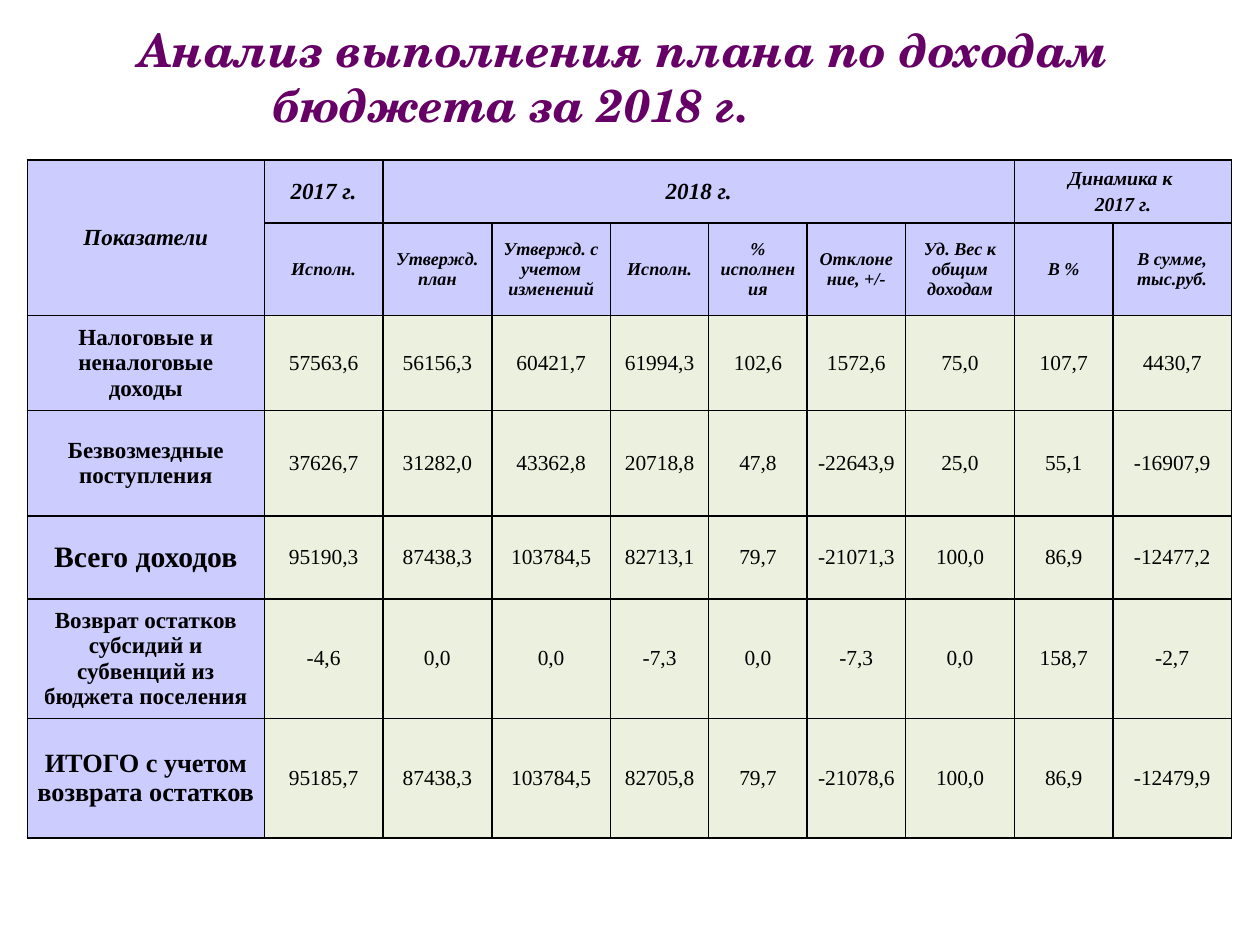
from lxml.etree import SubElement
from pptx import Presentation
from pptx.dml.color import RGBColor as RGB
from pptx.enum.text import MSO_ANCHOR as Anchor, PP_ALIGN as Align
from pptx.oxml import parse_xml
from pptx.oxml.ns import nsdecls, qn
from pptx.util import Emu, Inches, Pt

W, H = Emu(9720263), Emu(7200900)
COLORS = {"title": "660066", "text": "000000", "border": "000000",
          "head": "CCCCFF", "value": "EBF1DE"}
TITLE_FONT, TABLE_FONT = "TeX Gyre Schola", "Times New Roman"

TITLE = [("Анализ выполнения плана по доходам", 1.06),
         ("бюджета за 2018 г.", 2.2)]
GROUPS = [
    (0, 2, 1, "Показатели", 14),
    (1, 1, 1, "2017 г.", 14),
    (2, 1, 6, "2018 г.", 14),
    (8, 1, 2, "Динамика к \n2017 г.", 12),
]
HEADS = ["Исполн.", "Утвержд. план", "Утвержд. с учетом изменений", "Исполн.",
         "% исполнения", "Отклонение, +/-", "Уд. Вес к общим доходам",
         "В %", "В сумме, тыс.руб."]
ROWS = [
    ("Налоговые и неналоговые доходы", 14,
     "57563,6 56156,3 60421,7 61994,3 102,6 1572,6 75,0 107,7 4430,7"),
    ("Безвозмездные поступления", 14,
     "37626,7 31282,0 43362,8 20718,8 47,8 -22643,9 25,0 55,1 -16907,9"),
    ("Всего доходов", 18,
     "95190,3 87438,3 103784,5 82713,1 79,7 -21071,3 100,0 86,9 -12477,2"),
    ("Возврат остатков субсидий и субвенций из бюджета поселения", 14,
     "-4,6 0,0 0,0 -7,3 0,0 -7,3 0,0 158,7 -2,7"),
    ("ИТОГО с учетом возврата остатков", 16,
     "95185,7 87438,3 103784,5 82705,8 79,7 -21078,6 100,0 86,9 -12479,9"),
]
COL_WIDTHS = [2, 1, 0.92, 1, 0.83, 0.83, 0.83, 0.92, 0.83, 1]
ROW_HEIGHTS = [0.53, 0.78, 0.76, 0.89, 0.7, 1.01, 1.01]


def write(tf, text, size, font=TABLE_FONT, color="text", bold=False,
          italic=False, align=Align.CENTER, spaced=False, indents=()):
    for i, line in enumerate(text.split("\n")):
        p = tf.paragraphs[0] if i == 0 else tf.add_paragraph()
        p.alignment = align
        p_pr = p._p.get_or_add_pPr()
        if spaced:
            before = SubElement(p_pr, qn("a:spcBef"))
            SubElement(before, qn("a:spcPct"), val="20000")
        if indents:
            p_pr.set("marL", str(Inches(indents[i])))
        r = p.add_run()
        r.text = line
        r.font.name, r.font.size = font, Pt(size)
        r.font.bold, r.font.italic = bold, italic
        r.font.color.rgb = RGB.from_string(COLORS[color])


def style_cell(cell, fill, padded):
    cell.fill.solid()
    cell.fill.fore_color.rgb = RGB.from_string(COLORS[fill])
    cell.vertical_anchor = Anchor.MIDDLE
    cell.margin_left = cell.margin_right = Inches(0.1 if padded else 0.07)
    cell.margin_top = cell.margin_bottom = Inches(0.05 if padded else 0)
    tc_pr = cell._tc.get_or_add_tcPr()
    for i, side in enumerate(("lnL", "lnR", "lnT", "lnB")):
        ln = parse_xml(f'<a:{side} {nsdecls("a")} w="{Pt(1)}"/>')
        solid = SubElement(ln, qn("a:solidFill"))
        SubElement(solid, qn("a:srgbClr"), val=COLORS["border"])
        tc_pr.insert(i, ln)


def main():
    prs = Presentation()
    prs.slide_width, prs.slide_height = W, H
    s = prs.slides.add_slide(prs.slide_layouts[6])

    tf = s.shapes.add_textbox(0, Inches(0.27), W, Inches(0.75)).text_frame
    tf.word_wrap = True
    tf.vertical_anchor = Anchor.MIDDLE
    tf.margin_left = tf.margin_right = Inches(0.11)
    lines, indents = zip(*TITLE)
    write(tf, "\n".join(lines), 28, font=TITLE_FONT, color="title", bold=True,
          italic=True, align=Align.LEFT, indents=indents)

    table = s.shapes.add_table(
        len(ROW_HEIGHTS), len(COL_WIDTHS), Inches(0.23), Inches(1.35),
        Inches(sum(COL_WIDTHS)), Inches(sum(ROW_HEIGHTS))).table
    table.first_row = table.horz_banding = False
    for col, width in zip(table.columns, COL_WIDTHS):
        col.width = Inches(width)
    for row, height in zip(table.rows, ROW_HEIGHTS):
        row.height = Inches(height)

    for r in range(len(ROW_HEIGHTS)):
        for c in range(len(COL_WIDTHS)):
            head = r < 2 or c == 0
            style_cell(table.cell(r, c), "head" if head else "value",
                       head and r < 5)

    for c, rows, cols, text, size in GROUPS:
        cell = table.cell(0, c)
        if rows * cols > 1:
            cell.merge(table.cell(rows - 1, c + cols - 1))
        write(cell.text_frame, text, size, bold=True, italic=True, spaced=True)
    for c, text in enumerate(HEADS, 1):
        write(table.cell(1, c).text_frame, text, 11, bold=True, italic=True,
              spaced=True)
    for r, (label, size, values) in enumerate(ROWS, 2):
        write(table.cell(r, 0).text_frame, label, size, bold=True,
              spaced=r < 5)
        for c, value in enumerate(values.split(), 1):
            write(table.cell(r, c).text_frame, value, 13)

    prs.save("out.pptx")


if __name__ == "__main__":
    main()
